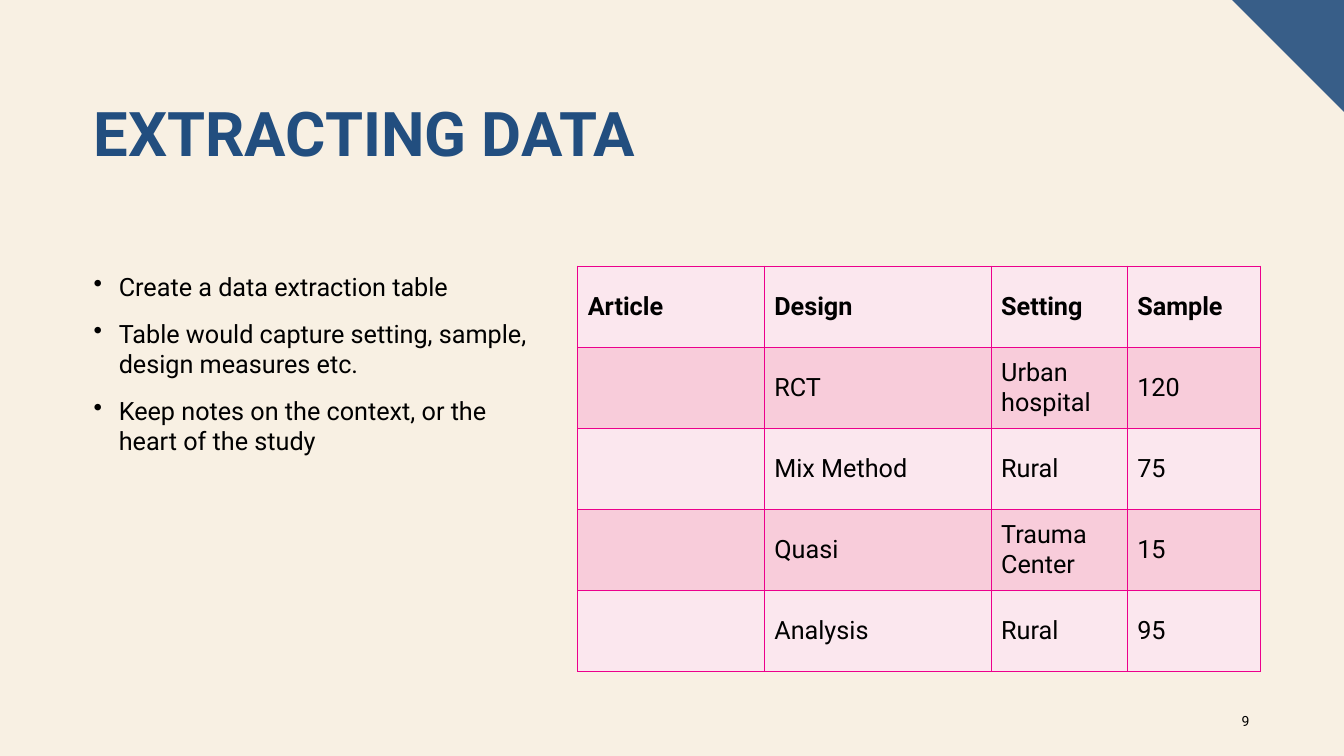
from lxml import etree
from pptx import Presentation
from pptx.dml.color import RGBColor
from pptx.enum import text as t
from pptx.oxml import ns
from pptx.util import Inches, Pt

HUES = {
    "back": "F8F0E3",
    "corner": "385E88",
    "title": "224E7F",
    "ink": "000000",
    "edge": "EC008C",
    "light": "FBE7EE",
    "dark": "F8CCDA",
}
FONT = "Roboto"
POINTS = [
    "Create a data extraction table",
    "Table would capture setting, sample, design measures etc.",
    "Keep notes on the context, or the heart of the study",
]
ROWS = [
    ["Article", "Design", "Setting", "Sample"],
    ["", "RCT", "Urban hospital", "120"],
    ["", "Mix Method", "Rural", "75"],
    ["", "Quasi", "Trauma Center", "15"],
    ["", "Analysis", "Rural", "95"],
]
WIDTHS = [1.85, 2.25, 1.35, 1.32]
HIGH = 0.804


def paint(fill, hue):
    fill.solid()
    fill.fore_color.rgb = RGBColor.from_string(HUES[hue])


def add_run(para, words, size, hue="ink", bold=False):
    run = para.add_run()
    run.text = words
    run.font.name = FONT
    run.font.size = Pt(size)
    run.font.bold = bold
    run.font.color.rgb = RGBColor.from_string(HUES[hue])


def add_box(slide, left, top, width, height):
    box = slide.shapes.add_textbox(
        Inches(left), Inches(top), Inches(width), Inches(height))
    box.text_frame.word_wrap = True
    return box.text_frame


def add_corner(slide, side):
    pen = slide.shapes.build_freeform(Inches(13.33 - side), 0)
    pen.add_line_segments(
        [(Inches(13.33), 0), (Inches(13.33), Inches(side))], close=True)
    shape = pen.convert_to_shape()
    shape.shadow.inherit = False
    paint(shape.fill, "corner")
    shape.line.fill.background()


def add_title(slide, words):
    para = add_box(slide, 0.83, 0.98, 11.67, 1.45).paragraphs[0]
    para.line_spacing = 0.9
    add_run(para, words, 44, "title", True)


def add_list(slide, points):
    frame = add_box(slide, 0.83, 2.64, 4.68, 4.09)
    for i, words in enumerate(points):
        para = frame.add_paragraph() if i else frame.paragraphs[0]
        props = para._p.get_or_add_pPr()
        props.set("marL", str(Inches(0.25)))
        props.set("indent", str(-Inches(0.25)))
        etree.SubElement(props, ns.qn("a:buChar"), char="•")
        para.space_after = Pt(12)
        add_run(para, words, 18)


def add_edges(cell):
    props = cell._tc.get_or_add_tcPr()
    for side in ("L", "R", "T", "B"):
        line = etree.SubElement(props, ns.qn("a:ln" + side), w=str(Pt(1)))
        fill = etree.SubElement(line, ns.qn("a:solidFill"))
        etree.SubElement(fill, ns.qn("a:srgbClr"), val=HUES["edge"])


def add_grid(slide, rows, widths):
    table = slide.shapes.add_table(
        len(rows), len(widths), Inches(5.73), Inches(2.64),
        Inches(sum(widths)), Inches(HIGH * len(rows))).table
    for col, width in zip(table.columns, widths):
        col.width = Inches(width)
    for r, row in enumerate(rows):
        table.rows[r].height = Inches(HIGH)
        for c, words in enumerate(row):
            cell = table.cell(r, c)
            add_edges(cell)
            paint(cell.fill, "dark" if r % 2 else "light")
            cell.vertical_anchor = t.MSO_ANCHOR.MIDDLE
            if words:
                add_run(cell.text_frame.paragraphs[0], words, 18, bold=r == 0)


def add_number(slide, words):
    frame = add_box(slide, 11.99, 6.95, 0.5, 0.4)
    frame.vertical_anchor = t.MSO_ANCHOR.MIDDLE
    para = frame.paragraphs[0]
    para.alignment = t.PP_ALIGN.RIGHT
    add_run(para, words, 10)


def main():
    deck = Presentation()
    deck.slide_width = Inches(13.33)
    deck.slide_height = Inches(7.5)
    slide = deck.slides.add_slide(deck.slide_layouts[6])
    paint(slide.background.fill, "back")
    add_corner(slide, 1.11)
    add_title(slide, "EXTRACTING DATA")
    add_list(slide, POINTS)
    add_grid(slide, ROWS, WIDTHS)
    add_number(slide, "9")
    deck.save("out.pptx")


if __name__ == "__main__":
    main()
